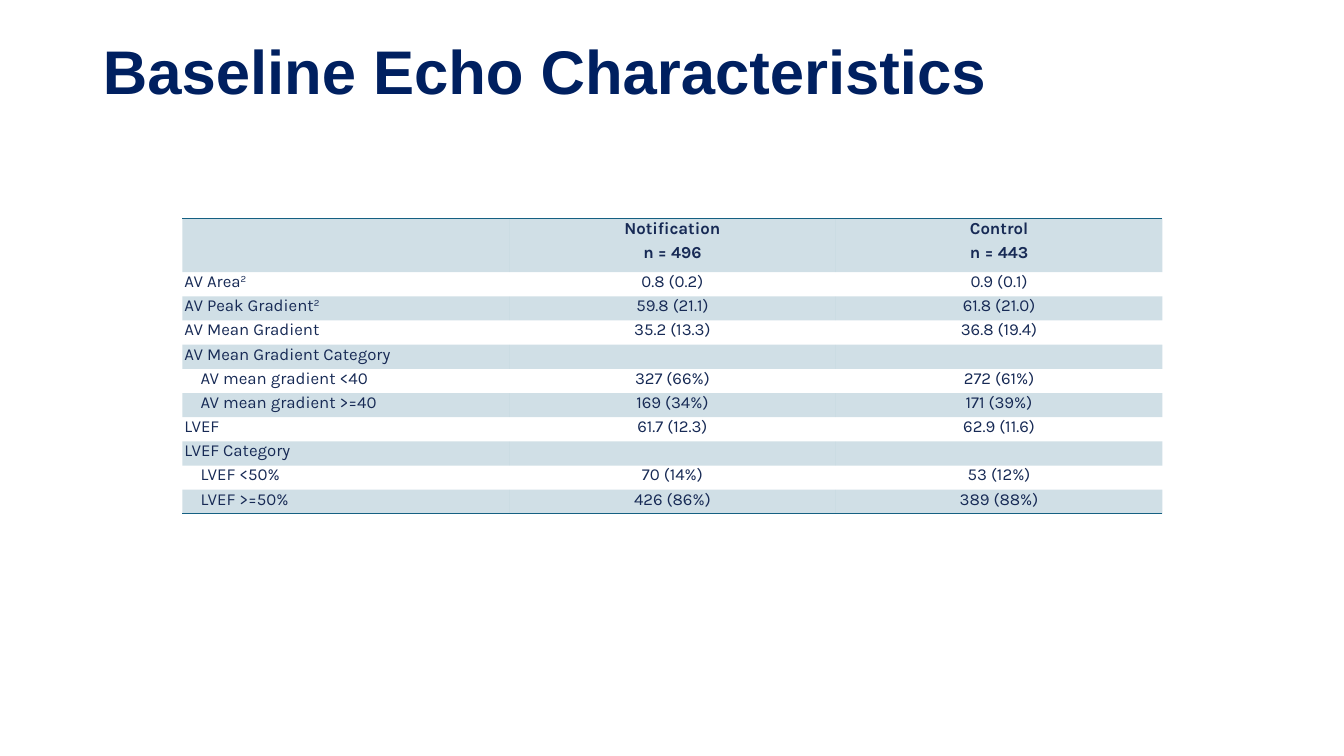
from dataclasses import dataclass

from lxml import etree
from pptx import Presentation
from pptx import util as u
from pptx.dml.color import RGBColor
from pptx.enum import text
from pptx.oxml.ns import qn


@dataclass(frozen=True)
class Theme:
    title_color: str = "002060"
    body_color: str = "172A55"
    accent: str = "156082"
    band_alpha: int = 20
    title_font: str = "Arial"
    body_font: str = "Karla"
    title_size: int = 44
    body_size: int = 12
    rule_width: int = 1
    plain_table: str = "{2D5ABB26-0587-4C30-8999-92F81FD0307C}"


def write(paragraph, content, *, font, size, color, bold=False, align="LEFT",
          after=0, indent=0, superscript=False):
    """Append one formatted run to a paragraph."""
    paragraph.alignment = getattr(text.PP_ALIGN, align)
    paragraph.space_after = u.Pt(after)
    if indent:
        properties = paragraph._p.get_or_add_pPr()
        properties.set("marL", str(u.Inches(indent)))
        properties.set("indent", "0")
    run = paragraph.add_run()
    run.text = content
    run.font.name = font
    run.font.size = u.Pt(size)
    run.font.bold = bold
    run.font.color.rgb = RGBColor.from_string(color)
    if superscript:
        run.font._element.set("baseline", "30000")


class Deck:
    def __init__(self, theme, width, height):
        self.theme = theme
        self.presentation = Presentation()
        self.presentation.slide_width = u.Inches(width)
        self.presentation.slide_height = u.Inches(height)
        self.slide = None

    def add_slide(self):
        title_only = self.presentation.slide_layouts[5]
        self.slide = self.presentation.slides.add_slide(title_only)

    def title(self, content, left, top, width, height):
        heading = self.slide.shapes.title
        heading.left, heading.top = u.Inches(left), u.Inches(top)
        heading.width, heading.height = u.Inches(width), u.Inches(height)
        heading.text_frame.vertical_anchor = text.MSO_ANCHOR.MIDDLE
        paragraph = heading.text_frame.paragraphs[0]
        paragraph.line_spacing = 0.9
        write(paragraph, content, font=self.theme.title_font, bold=True,
              size=self.theme.title_size, color=self.theme.title_color)

    def table(self, header, rows, left, top, column_width, header_height, row_height):
        frame = self.slide.shapes.add_table(
            len(rows) + 1, len(header), u.Inches(left), u.Inches(top),
            u.Inches(column_width * len(header)),
            u.Inches(header_height + row_height * len(rows)))
        table = frame.table
        table.first_row = table.horz_banding = False
        table._tbl.tblPr.find(qn("a:tableStyleId")).text = self.theme.plain_table
        for column in table.columns:
            column.width = u.Inches(column_width)

        for r, values in enumerate([header] + rows):
            table.rows[r].height = u.Inches(row_height if r else header_height)
            for c, value in enumerate(values):
                cell = table.cell(r, c)
                self.fill_cell(cell, value, bold=r == 0,
                               align="CENTER" if c else "LEFT")
                self.band(cell, r % 2 == 0)
                if r == 0:
                    self.rule(cell, "a:lnT")
                elif r == len(rows):
                    self.rule(cell, "a:lnB")

    def fill_cell(self, cell, value, bold, align):
        """A leading > indents, ^ starts a superscript, a newline a paragraph."""
        theme = self.theme
        cell.margin_left = cell.margin_right = u.Inches(0.02)
        cell.margin_top = cell.margin_bottom = 0
        frame = cell.text_frame
        if not value:
            end = etree.SubElement(frame.paragraphs[0]._p, qn("a:endParaRPr"))
            end.set("sz", str(theme.body_size * 100))
            return
        indent = 0.16 if value.startswith(">") else 0
        for i, line in enumerate(value.removeprefix(">").split("\n")):
            paragraph = frame.add_paragraph() if i else frame.paragraphs[0]
            for j, part in enumerate(line.split("^")):
                write(paragraph, part, font=theme.body_font, size=theme.body_size,
                      color=theme.body_color, bold=bold, align=align, after=3,
                      indent=indent, superscript=j > 0)

    def band(self, cell, shaded):
        if not shaded:
            cell.fill.background()
            return
        cell.fill.solid()
        cell.fill.fore_color.rgb = RGBColor.from_string(self.theme.accent)
        color = cell._tc.tcPr.find(".//" + qn("a:srgbClr"))
        etree.SubElement(color, qn("a:alpha")).set(
            "val", str(self.theme.band_alpha * 1000))

    def rule(self, cell, side):
        line = etree.Element(qn(side), w=str(u.Pt(self.theme.rule_width)))
        fill = etree.SubElement(line, qn("a:solidFill"))
        etree.SubElement(fill, qn("a:srgbClr"), val=self.theme.accent)
        cell._tc.tcPr.insert(0, line)

    def save(self):
        self.presentation.save("out.pptx")


HEADER = ["", "Notification\nn = 496", "Control\nn = 443"]
ROWS = [
    ["AV Area^2", "0.8 (0.2)", "0.9 (0.1)"],
    ["AV Peak Gradient^2", "59.8 (21.1)", "61.8 (21.0)"],
    ["AV Mean Gradient", "35.2 (13.3)", "36.8 (19.4)"],
    ["AV Mean Gradient Category", "", ""],
    [">AV mean gradient <40", "327 (66%)", "272 (61%)"],
    [">AV mean gradient >=40", "169 (34%)", "171 (39%)"],
    ["LVEF", "61.7 (12.3)", "62.9 (11.6)"],
    ["LVEF Category", "", ""],
    [">LVEF <50%", "70 (14%)", "53 (12%)"],
    [">LVEF >=50%", "426 (86%)", "389 (88%)"],
]


def main():
    deck = Deck(Theme(), 13.33, 7.5)
    deck.add_slide()

    # Title
    deck.title("Baseline Echo Characteristics", 0.92, 0.01, 11.5, 1.45)

    # Echo measurements by study arm
    deck.table(HEADER, ROWS, left=1.81, top=2.17, column_width=3.24,
               header_height=0.53, row_height=0.24)

    deck.save()


if __name__ == "__main__":
    main()
